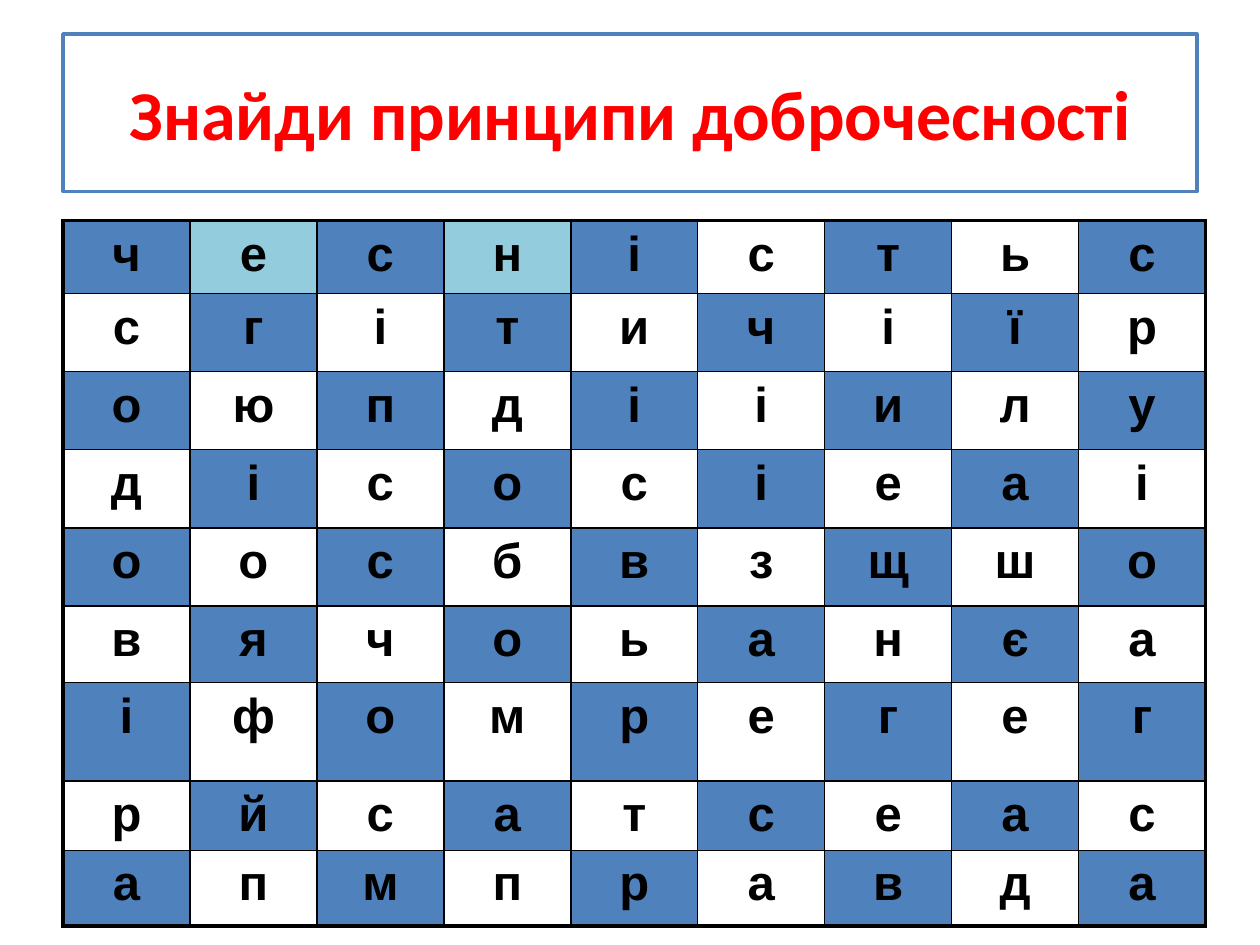
from dataclasses import dataclass
from typing import NamedTuple

from lxml import etree
from pptx import Presentation
from pptx.dml.color import RGBColor
from pptx.enum import shapes, text
from pptx.oxml import ns
from pptx.util import Inches, Pt


@dataclass(frozen=True)
class Theme:
    blue: str = "4F81BD"
    light: str = "93CDDD"
    white: str = "FFFFFF"
    red: str = "FF0000"
    black: str = "000000"
    title_font: str = "Calibri"
    letter_font: str = "Arial"
    title_size: float = 40
    letter_size: float = 28
    title_line: float = 2
    outer_line: float = 2.25
    inner_line: float = 1


class Edge(NamedTuple):
    tag: str
    outer: bool


THEME = Theme()
LETTER_ROWS = [
    "чесністьc",
    "сгітичіїp",
    "oюпдіiилу",
    "дicоcіeai",
    "оocбвзщшо",
    "вячoьанєa",
    "іфoмpeгeг",
    "рйcaтсeаc",
    "апмправда",
]
ROW_HEIGHTS = [0.58, 0.62, 0.62, 0.62, 0.62, 0.61, 0.78, 0.55, 0.6]
LIGHT_CELLS = {(0, 1), (0, 3)}
TABLE_WIDTH = 9.07


def style_paragraph(paragraph, font: str, size: float, color: str) -> None:
    paragraph.alignment = text.PP_ALIGN.CENTER
    paragraph.font.name = font
    paragraph.font.size = Pt(size)
    paragraph.font.bold = True
    paragraph.font.color.rgb = RGBColor.from_string(color)


def draw_border(cell, edge: Edge) -> None:
    width = THEME.outer_line if edge.outer else THEME.inner_line
    line = etree.SubElement(cell._tc.get_or_add_tcPr(), ns.qn(f"a:{edge.tag}"), w=str(Pt(width)))
    fill = etree.SubElement(line, ns.qn("a:solidFill"))
    etree.SubElement(fill, ns.qn("a:srgbClr"), val=THEME.black)


def fill_cell(cell, row: int, column: int) -> None:
    if (row, column) in LIGHT_CELLS:
        color = THEME.light
    elif (row + column) % 2 == 0:
        color = THEME.blue
    else:
        cell.fill.background()
        return
    cell.fill.solid()
    cell.fill.fore_color.rgb = RGBColor.from_string(color)


def draw_title(slide, wording: str) -> None:
    title = slide.shapes.add_shape(
        shapes.MSO_SHAPE.RECTANGLE, Inches(0.5), Inches(0.27), Inches(9), Inches(1.25))
    title.shadow.inherit = False
    title.fill.solid()
    title.fill.fore_color.rgb = RGBColor.from_string(THEME.white)
    title.line.color.rgb = RGBColor.from_string(THEME.blue)
    title.line.width = Pt(THEME.title_line)
    frame = title.text_frame
    frame.word_wrap = True
    frame.vertical_anchor = text.MSO_ANCHOR.MIDDLE
    frame.text = wording
    style_paragraph(frame.paragraphs[0], THEME.title_font, THEME.title_size, THEME.red)


def draw_letter_grid(slide, letter_rows: list[str]) -> None:
    last_row, last_column = len(letter_rows) - 1, len(letter_rows[0]) - 1
    grid = slide.shapes.add_table(
        last_row + 1, last_column + 1,
        Inches(0.5), Inches(1.75), Inches(TABLE_WIDTH), Inches(sum(ROW_HEIGHTS))).table
    grid.first_row = grid.horz_banding = False
    for column in grid.columns:
        column.width = Inches(TABLE_WIDTH / (last_column + 1))

    for r, letters in enumerate(letter_rows):
        grid.rows[r].height = Inches(ROW_HEIGHTS[r])
        for c, letter in enumerate(letters):
            cell = grid.cell(r, c)
            cell.text = letter
            style_paragraph(cell.text_frame.paragraphs[0],
                            THEME.letter_font, THEME.letter_size, THEME.black)
            # Thick lines only around the outside of the grid
            for edge in (Edge("lnL", c == 0), Edge("lnR", c == last_column),
                         Edge("lnT", r == 0), Edge("lnB", r == last_row)):
                draw_border(cell, edge)
            fill_cell(cell, r, c)


def main() -> None:
    deck = Presentation()
    deck.slide_width, deck.slide_height = Inches(10), Inches(7.5)
    slide = deck.slides.add_slide(deck.slide_layouts[6])

    # Heading
    draw_title(slide, "Знайди принципи доброчесності")

    # Word search
    draw_letter_grid(slide, LETTER_ROWS)

    deck.save("out.pptx")


if __name__ == "__main__":
    main()
